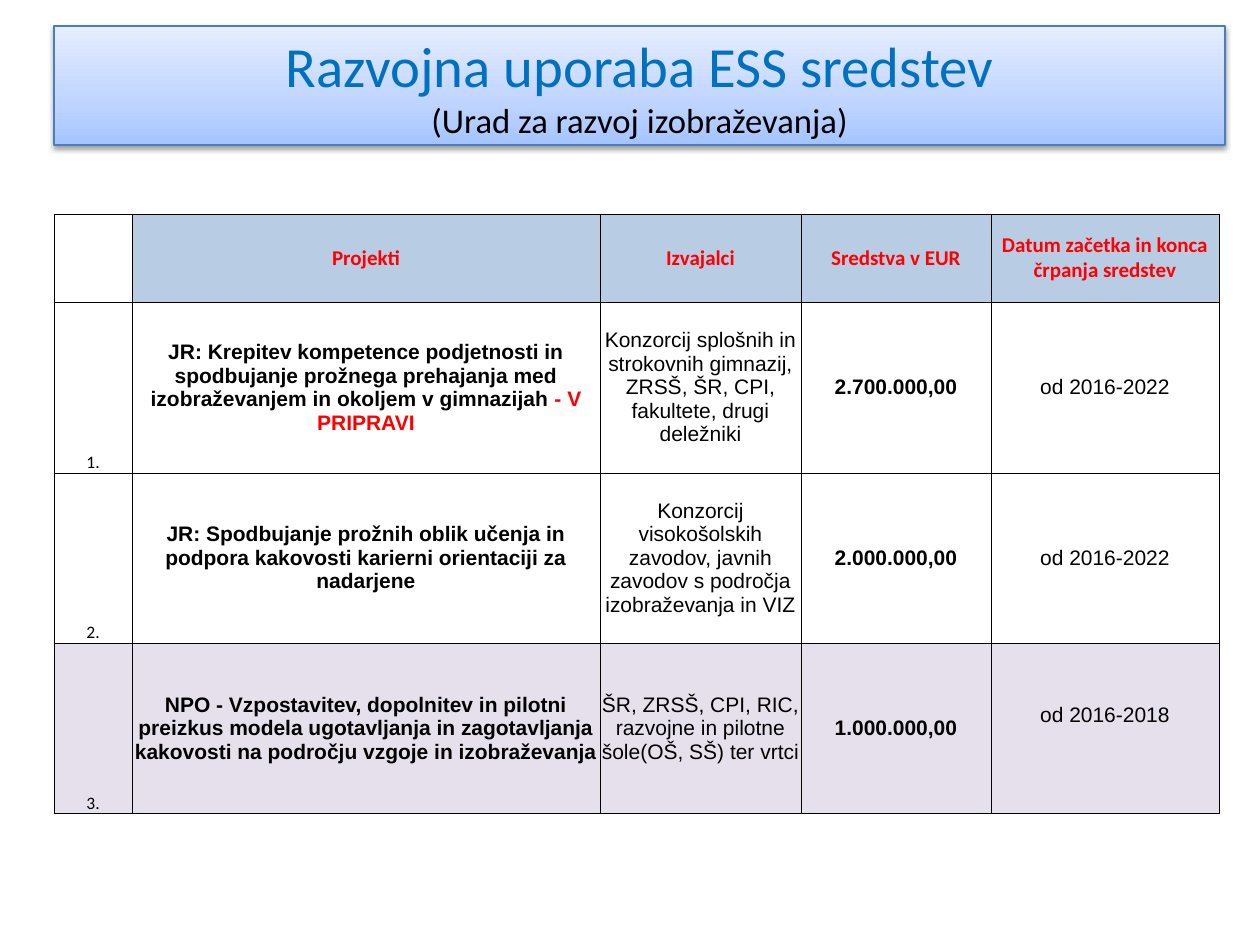
import pptx
import pptx.util
import pptx.dml.color
import pptx.enum.text
import pptx.oxml
import pptx.oxml.ns
import lxml.etree

# Content
TITLE = ("Razvojna uporaba ESS sredstev", "(Urad za razvoj izobraževanja)")
HEADERS = ["", "Projekti", "Izvajalci", "Sredstva v EUR",
           "Datum začetka in konca črpanja sredstev"]
PROJECTS = [
    ["1.", "JR: Krepitev kompetence podjetnosti in spodbujanje prožnega prehajanja med "
     "izobraževanjem in okoljem v gimnazijah ",
     "Konzorcij splošnih in strokovnih gimnazij, ZRSŠ, ŠR, CPI, fakultete, drugi deležniki",
     "2.700.000,00", "od 2016-2022"],
    ["2.", "JR: Spodbujanje prožnih oblik učenja in podpora kakovosti karierni orientaciji "
     "za nadarjene",
     "Konzorcij visokošolskih zavodov, javnih zavodov s področja izobraževanja in VIZ",
     "2.000.000,00", "od 2016-2022"],
    ["3.", "NPO - Vzpostavitev, dopolnitev in pilotni preizkus modela ugotavljanja in "
     "zagotavljanja kakovosti na področju vzgoje in izobraževanja",
     "ŠR, ZRSŠ, CPI, RIC, razvojne in pilotne šole(OŠ, SŠ) ter vrtci",
     "1.000.000,00", "od 2016-2018"],
]
STATUS_NOTES = {1: "- V PRIPRAVI"}  # red ending of a project name, by table row
BOLD_COLUMNS = (1, 3)
HIGHLIGHT_ROW = 3

THEME = {
    "heading_font": "Calibri", "body_font": "Arial",
    "title": "0070C0", "text": "000000", "accent": "FF0000",
    "header_fill": "B8CCE4", "highlight_fill": "E6E0EC", "title_line": "4B7EBC",
    "title_gradient": [(0, "A4C4FF"), (35, "BFD4FF"), (100, "E6EEFF")],
    "title_size": 32.4, "subtitle_size": 19.8, "body_size": 12, "number_size": 10,
}

# Layout in px, 126 to the inch
PX = 914400 // 126
SLIDE_SIZE = (1260, 945)
TITLE_BOX = (54, 26, 1171, 119)
TABLE_ORIGIN = (54, 214)
COLUMN_WIDTHS = [78, 468, 201, 190, 228]
ROW_HEIGHTS = [88, 171, 170, 171]
LAST_DATE_LIFT = 26


def px(value):
    return pptx.util.Emu(value * PX)


def rgb(name):
    return pptx.dml.color.RGBColor.from_string(THEME.get(name, name))


def format_run(run, font, size, color, bold=False):
    run.font.name = THEME[font]
    run.font.size = pptx.util.Pt(THEME[size])
    run.font.color.rgb = rgb(color)
    run.font.bold = bold


def add_element(parent, tag, **attributes):
    element = lxml.etree.SubElement(parent, pptx.oxml.ns.qn(tag))
    for name, value in attributes.items():
        element.set(name, str(value))
    return element


def add_borders(cell):
    properties = cell._tc.get_or_add_tcPr()
    for position, side in enumerate(("a:lnL", "a:lnR", "a:lnT", "a:lnB")):
        line = add_element(properties, side, w=pptx.util.Pt(0.5))
        fill = add_element(line, "a:solidFill")
        add_element(fill, "a:srgbClr", val=THEME["text"])
        properties.insert(position, line)


def build_title(shape):
    shape.left, shape.top, shape.width, shape.height = map(px, TITLE_BOX)
    # Three-stop gradient, dark at the bottom
    shape.fill.gradient()
    shape.fill.gradient_angle = 90
    stops = shape._element.spPr.find(".//" + pptx.oxml.ns.qn("a:gsLst"))
    for stop in list(stops):
        stops.remove(stop)
    for percent, color in THEME["title_gradient"]:
        stop = add_element(stops, "a:gs", pos=percent * 1000)
        add_element(stop, "a:srgbClr", val=color)
    shape.line.color.rgb = rgb("title_line")
    shape.line.width = pptx.util.Pt(0.75)
    # Soft shadow below
    shape.shadow.inherit = False
    effects = shape._element.spPr.find(pptx.oxml.ns.qn("a:effectLst"))
    shadow = add_element(effects, "a:outerShdw", blurRad=pptx.util.Pt(3.1),
                         dist=pptx.util.Pt(1.6), dir=90 * 60000, rotWithShape=0)
    color = add_element(shadow, "a:srgbClr", val=THEME["text"])
    add_element(color, "a:alpha", val=38000)
    # Two lines of text
    frame = shape.text_frame
    frame.text = "\v".join(TITLE)
    frame.word_wrap = True
    frame.auto_size = pptx.enum.text.MSO_AUTO_SIZE.NONE
    frame.vertical_anchor = pptx.enum.text.MSO_ANCHOR.MIDDLE
    paragraph = frame.paragraphs[0]
    paragraph.alignment = pptx.enum.text.PP_ALIGN.CENTER
    heading, subtitle = paragraph.runs
    format_run(heading, "heading_font", "title_size", "title")
    format_run(subtitle, "heading_font", "subtitle_size", "text")


def fill_cell(cell, row, column, text):
    anchor = pptx.enum.text.MSO_ANCHOR
    is_number = column == 0
    cell.margin_left = cell.margin_right = cell.margin_top = cell.margin_bottom = 0
    cell.vertical_anchor = anchor.BOTTOM if is_number else anchor.MIDDLE
    if row == 0 and not is_number:
        fill = "header_fill"
    else:
        fill = "highlight_fill" if row == HIGHLIGHT_ROW else None
    if fill:
        cell.fill.solid()
        cell.fill.fore_color.rgb = rgb(fill)
    else:
        cell.fill.background()
    add_borders(cell)
    if not text:
        return
    if row == 0:
        style = ("heading_font", "body_size", "accent", True)
    elif is_number:
        style = ("heading_font", "number_size", "text")
    else:
        style = ("body_font", "body_size", "text", column in BOLD_COLUMNS)
    cell.text_frame.text = text
    paragraph = cell.text_frame.paragraphs[0]
    paragraph.alignment = pptx.enum.text.PP_ALIGN.CENTER
    format_run(paragraph.runs[0], *style)
    if column == 1 and row in STATUS_NOTES:
        note = paragraph.add_run()
        note.text = STATUS_NOTES[row]
        format_run(note, "body_font", "body_size", "accent", True)


def build_table(slide):
    rows = [HEADERS] + PROJECTS
    left, top = TABLE_ORIGIN
    table = slide.shapes.add_table(
        len(rows), len(HEADERS), px(left), px(top),
        px(sum(COLUMN_WIDTHS)), px(sum(ROW_HEIGHTS))).table
    table.first_row = table.horz_banding = False
    for column, width in zip(table.columns, COLUMN_WIDTHS):
        column.width = px(width)
    for row, height in zip(table.rows, ROW_HEIGHTS):
        row.height = px(height)
    for row, texts in enumerate(rows):
        for column, text in enumerate(texts):
            fill_cell(table.cell(row, column), row, column, text)
    # The last date sits slightly above the middle
    table.cell(len(rows) - 1, len(HEADERS) - 1).margin_bottom = px(LAST_DATE_LIFT)


def main():
    presentation = pptx.Presentation()
    presentation.slide_width, presentation.slide_height = map(px, SLIDE_SIZE)
    slide = presentation.slides.add_slide(presentation.slide_layouts[5])
    build_title(slide.shapes.title)
    build_table(slide)
    presentation.save("out.pptx")


if __name__ == "__main__":
    main()
